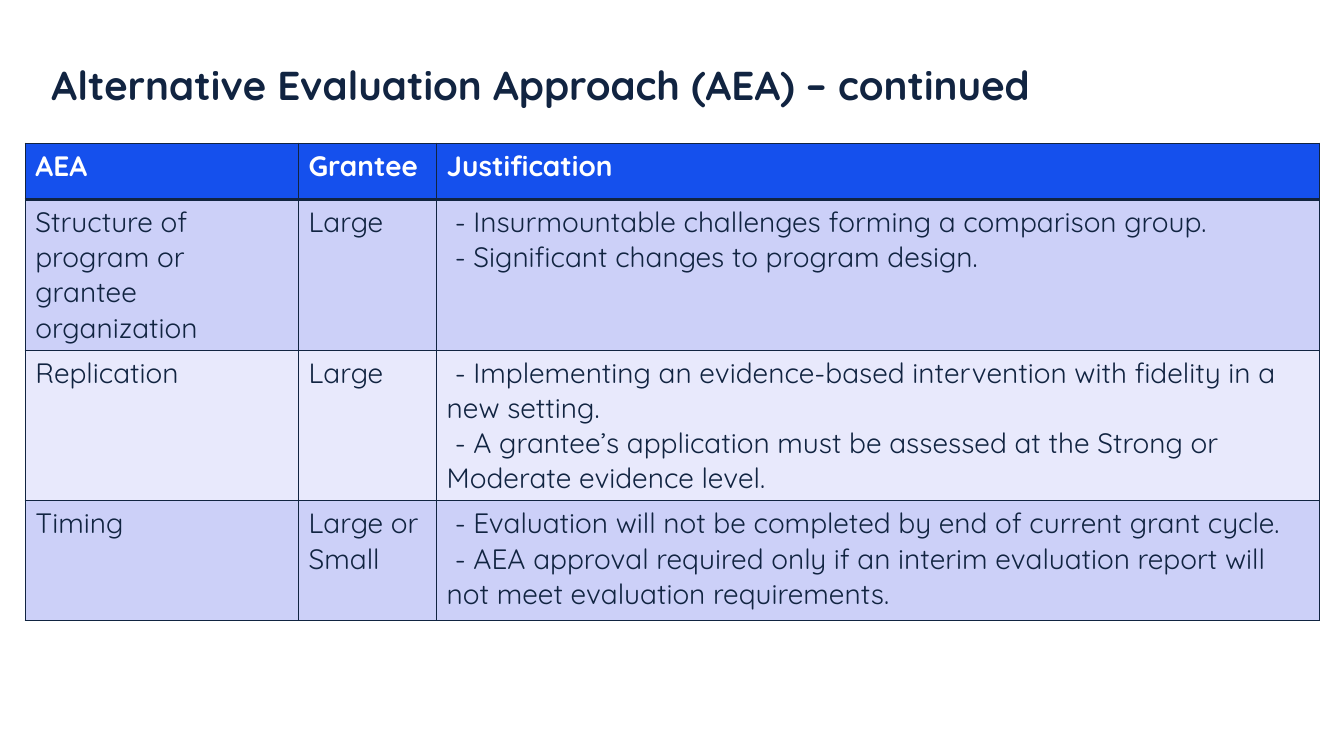
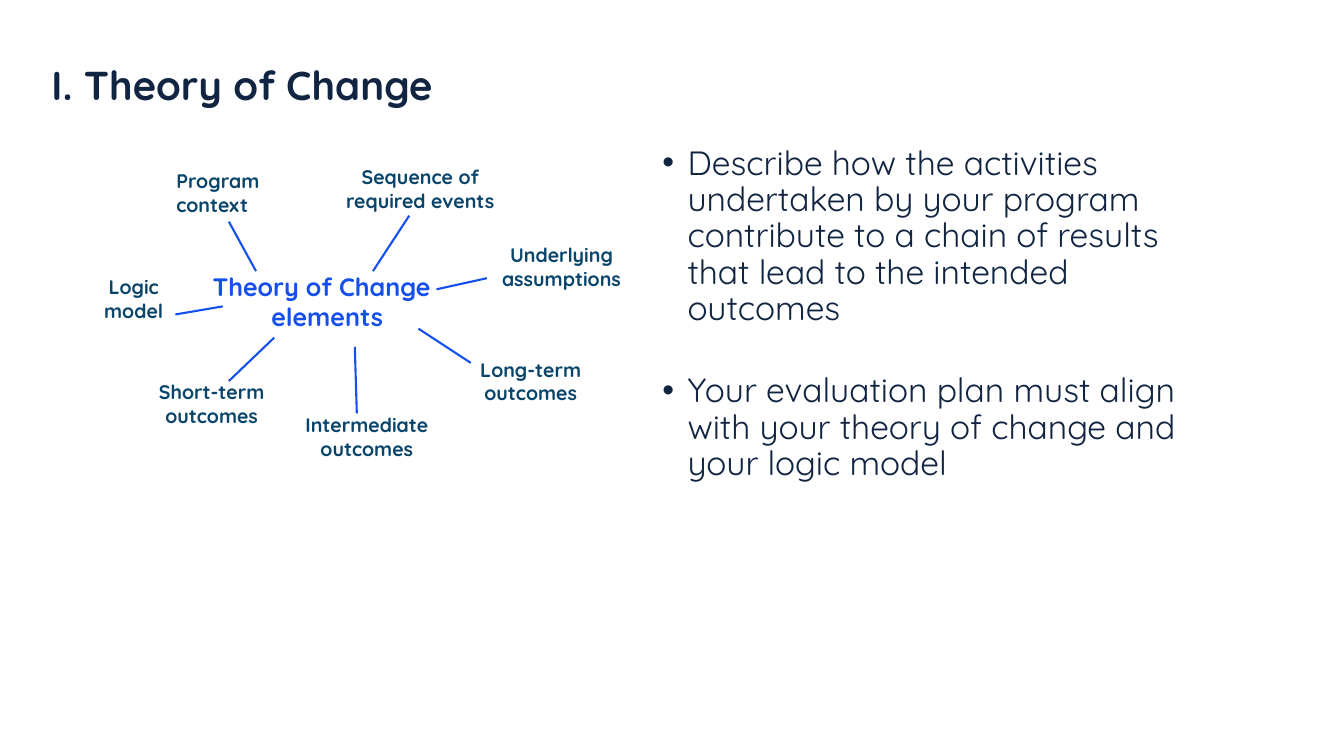
from lxml import etree
from pptx import Presentation
from pptx.dml.color import RGBColor
from pptx.enum.shapes import MSO_CONNECTOR
from pptx.enum.text import MSO_ANCHOR, MSO_AUTO_SIZE, PP_ALIGN
from pptx.oxml.ns import qn
from pptx.util import Inches, Pt

STRAIGHT = MSO_CONNECTOR.STRAIGHT
BOTTOM, TOP = MSO_ANCHOR.BOTTOM, MSO_ANCHOR.TOP
NO_FIT = MSO_AUTO_SIZE.NONE
LEFT, CENTER = PP_ALIGN.LEFT, PP_ALIGN.CENTER

WIDTH, HEIGHT = Inches(13.33), Inches(7.5)
FONT = "Quicksand"
NAVY, BLUE, TEAL, WHITE = "112441", "1550ED", "09446A", "FFFFFF"
BANDS = ("CCD0F8", "E8E9FC")
TITLE_AND_BODY, TITLE_ONLY = 1, 5

TITLE_FONT = {"size": Pt(28.8), "bold": True}
BODY_FONT = {"size": Pt(24), "bold": False}
HEADER_FONT = {"size": Pt(20), "bold": True}
CELL_FONT = {"size": Pt(20), "bold": False}
HUB_FONT = {"size": Pt(18), "bold": True}
LABEL_FONT = {"size": Pt(14), "bold": True}

TABLE_COLUMNS = (20.33, 10.28, 65.7)
TABLE_ROWS = (7.47, 19.87, 19.87, 15.8)
TABLE = (
    (["AEA"], ["Grantee"], ["Justification"]),
    (["Structure of program or grantee organization"], ["Large"],
     ["- Insurmountable challenges forming a comparison group.",
      "- Significant changes to program design."]),
    (["Replication"], ["Large"],
     ["- Implementing an evidence-based intervention with fidelity in a new setting.",
      "- A grantee’s application must be assessed at the Strong or Moderate evidence level."]),
    (["Timing"], ["Large or Small"],
     ["- Evaluation will not be completed by end of current grant cycle.",
      "- AEA approval required only if an interim evaluation report will not meet "
      "evaluation requirements."]),
)

ADVICE = (
    "Describe how the activities undertaken by your program contribute to a chain "
    "of results that lead to the intended outcomes",
    "Your evaluation plan must align with your theory of change and your logic model",
)

LABELS = (
    (("Program", "context"), (12.38, 21.73, 9.98), LEFT),
    (("Sequence of", "required events"), (22.95, 21.2, 16.65), CENTER),
    (("Underlying", "assumptions"), (35.03, 31.47, 13.5), CENTER),
    (("Logic", "model"), (5.93, 35.73, 8.03), CENTER),
    (("Short-term", "outcomes"), (9.9, 49.6, 11.7), CENTER),
    (("Intermediate", "outcomes"), (20.25, 54, 14.1), CENTER),
    (("Long-term", "outcomes"), (33.68, 46.67, 11.63), CENTER),
)

SPOKES = (
    (19.05, 35.87, 17.03, 29.33),
    (27.75, 35.87, 30.45, 28.53),
    (32.48, 38.27, 36.23, 36.8),
    (13.05, 41.6, 16.58, 40.53),
    (31.13, 43.47, 35.03, 48),
    (26.4, 45.87, 26.55, 54.67),
    (20.4, 44.67, 17.03, 50.4),
)


def color(value):
    return RGBColor.from_string(value)


def across(percent):
    return round(WIDTH * percent / 100)


def down(percent):
    return round(HEIGHT * percent / 100)


def area(left, top, width, height):
    return across(left), down(top), across(width), down(height)


def apply(target, values):
    for name, value in values.items():
        setattr(target, name, value)


class Deck:
    def __init__(self):
        self.presentation = Presentation()
        apply(self.presentation, {"slide_width": WIDTH, "slide_height": HEIGHT})
        self.slide = None

    def start(self, layout, title, width):
        self.slide = self.presentation.slides.add_slide(
            self.presentation.slide_layouts[layout])
        shape = self.slide.shapes.title
        self.place(shape, 3.83, 8.27, width, 6.13)
        apply(shape.text_frame, {
            "margin_left": 0, "margin_right": 0, "margin_top": 0, "margin_bottom": 0,
            "vertical_anchor": BOTTOM, "auto_size": NO_FIT})
        self.fill_text(shape.text_frame, [title], TITLE_FONT, NAVY,
                       {"alignment": LEFT, "line_spacing": 0.9})

    def place(self, shape, *bounds):
        apply(shape, dict(zip(("left", "top", "width", "height"), area(*bounds))))

    def fill_text(self, frame, lines, font, text_color, layout):
        for index, line in enumerate(lines):
            paragraph = frame.paragraphs[0] if index == 0 else frame.add_paragraph()
            apply(paragraph, layout)
            run = paragraph.add_run()
            run.text = line
            apply(run.font, {"name": FONT, **font})
            run.font.color.rgb = color(text_color)

    def indent(self, paragraph, left, first):
        properties = paragraph._p.get_or_add_pPr()
        properties.set("marL", str(Inches(left)))
        properties.set("indent", str(Inches(first)))
        return properties

    def bullets(self, lines, *bounds):
        shape = self.slide.placeholders[1]
        self.place(shape, *bounds)
        frame = shape.text_frame
        apply(frame, {"auto_size": NO_FIT, "vertical_anchor": TOP})
        self.fill_text(frame, lines, BODY_FONT, NAVY,
                       {"alignment": LEFT, "line_spacing": 0.9, "space_before": Pt(33)})
        frame.paragraphs[0].space_before = Pt(0)
        for paragraph in frame.paragraphs:
            properties = self.indent(paragraph, 0.25, -0.25)
            etree.SubElement(properties, qn("a:buFont"), typeface="Arial")
            etree.SubElement(properties, qn("a:buChar"), char="•")

    def label(self, parent, lines, bounds, font, text_color, alignments):
        frame = parent.shapes.add_textbox(*area(*bounds)).text_frame
        frame.word_wrap = True
        self.fill_text(frame, lines, font, text_color, {})
        for paragraph, alignment in zip(frame.paragraphs, alignments):
            paragraph.alignment = alignment

    def line(self, parent, x1, y1, x2, y2):
        connector = parent.shapes.add_connector(
            STRAIGHT, across(x1), down(y1), across(x2), down(y2))
        connector.line.color.rgb = color(BLUE)
        connector.line.width = Pt(1.5)
        etree.SubElement(connector._element.spPr, qn("a:effectLst"))

    def border(self, cell, side, points):
        edge = etree.SubElement(cell._tc.get_or_add_tcPr(), qn("a:" + side),
                                w=str(Pt(points)))
        fill = etree.SubElement(edge, qn("a:solidFill"))
        etree.SubElement(fill, qn("a:srgbClr"), val=NAVY)

    def table(self, rows, columns, heights, left, top):
        table = self.slide.shapes.add_table(
            len(rows), len(columns),
            *area(left, top, sum(columns), sum(heights))).table
        for column, width in zip(table.columns, columns):
            column.width = across(width)
        for index, (row, height) in enumerate(zip(table.rows, heights)):
            row.height = down(height)
            header = index == 0
            fill = BLUE if header else BANDS[(index - 1) % 2]
            for cell, lines in zip(row.cells, rows[index]):
                for side in ("lnL", "lnR", "lnT", "lnB"):
                    thick = (header and side == "lnB") or (index == 1 and side == "lnT")
                    self.border(cell, side, 3 if thick else 1)
                cell.fill.solid()
                cell.fill.fore_color.rgb = color(fill)
                self.fill_text(cell.text_frame, lines,
                               HEADER_FONT if header else CELL_FONT,
                               WHITE if header else NAVY, {"alignment": LEFT})
                for paragraph in cell.text_frame.paragraphs:
                    if paragraph.text.startswith("- "):
                        self.indent(paragraph, 0, 0.08)


def main():
    deck = Deck()
    deck.start(TITLE_ONLY, "Alternative Evaluation Approach (AEA) – continued", 82.2)
    deck.table(TABLE, TABLE_COLUMNS, TABLE_ROWS, 1.88, 18.93)

    deck.start(TITLE_AND_BODY, "I. Theory of Change", 49.88)
    deck.bullets(ADVICE, 48.53, 18.67, 41.55, 62.13)
    diagram = deck.slide.shapes.add_group_shape()
    deck.label(diagram, ("Theory of Change", "elements"), (15.08, 35.2, 18.53, 9.47),
               HUB_FONT, BLUE, (LEFT, CENTER))
    for spoke in SPOKES:
        deck.line(diagram, *spoke)
    for lines, bounds, alignment in LABELS:
        deck.label(diagram, lines, (*bounds, 10), LABEL_FONT, TEAL, (alignment, alignment))
    deck.presentation.save("out.pptx")


if __name__ == "__main__":
    main()
